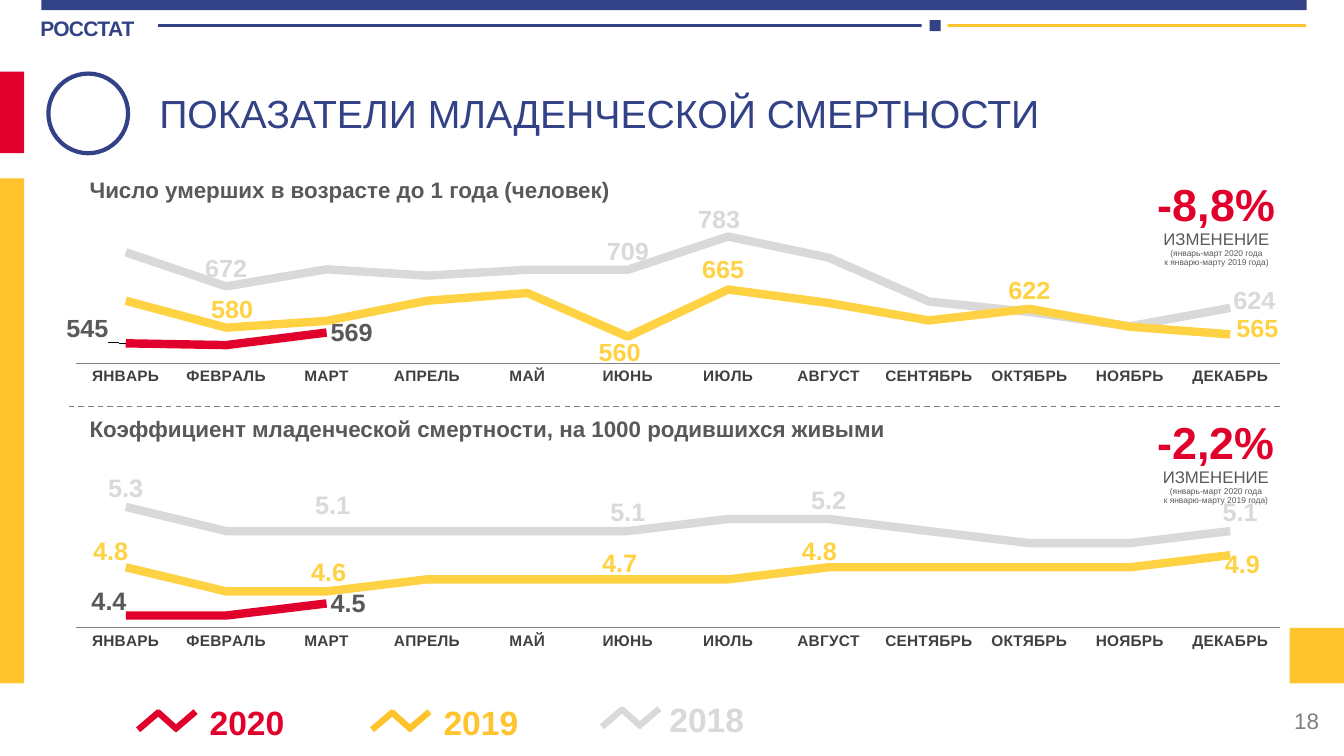
from copy import deepcopy

from lxml import etree
from pptx import Presentation
from pptx.chart.data import CategoryChartData
from pptx.dml.color import RGBColor
from pptx.enum.chart import XL_CHART_TYPE, XL_LABEL_POSITION, XL_TICK_MARK
from pptx.enum.dml import MSO_LINE
from pptx.enum.shapes import MSO_CONNECTOR, MSO_SHAPE
from pptx.enum.text import MSO_ANCHOR, PP_ALIGN
from pptx.oxml.ns import qn
from pptx.util import Inches, Pt

BLUE = RGBColor(0x33, 0x42, 0x86)
RED = RGBColor(0xE1, 0x00, 0x2B)
AMBER = RGBColor(0xFF, 0xC3, 0x2E)
YELLOW = RGBColor(0xFF, 0xD2, 0x43)
SILVER = RGBColor(0xD9, 0xD9, 0xD9)
GREY = RGBColor(0x80, 0x80, 0x80)
DARK = RGBColor(0x59, 0x59, 0x59)
INK = RGBColor(0x40, 0x40, 0x40)
WHITE = RGBColor(0xFF, 0xFF, 0xFF)

LEFT, CENTER, RIGHT = PP_ALIGN.LEFT, PP_ALIGN.CENTER, PP_ALIGN.RIGHT
TOP, MIDDLE = MSO_ANCHOR.TOP, MSO_ANCHOR.MIDDLE
ABOVE, BESIDE = XL_LABEL_POSITION.ABOVE, XL_LABEL_POSITION.RIGHT
RECTANGLE, OVAL = MSO_SHAPE.RECTANGLE, MSO_SHAPE.OVAL
STRAIGHT, DASH = MSO_CONNECTOR.STRAIGHT, MSO_LINE.DASH
LINE_CHART, NO_TICK = XL_CHART_TYPE.LINE, XL_TICK_MARK.NONE

CHART_WIDTH, CHART_HEIGHT = 12.58, 2.3
MONTHS = ["ЯНВАРЬ", "ФЕВРАЛЬ", "МАРТ", "АПРЕЛЬ", "МАЙ", "ИЮНЬ", "ИЮЛЬ",
          "АВГУСТ", "СЕНТЯБРЬ", "ОКТЯБРЬ", "НОЯБРЬ", "ДЕКАБРЬ"]
YEAR_STYLES = [("2018", SILVER, SILVER, ABOVE), ("2019", YELLOW, YELLOW, ABOVE),
               ("2020", RED, DARK, BESIDE)]

DEATHS = [[748, 672, 710, 696, 709, 709, 783, 736, 638, 615, 583, 624],
          [640, 580, 595, 640, 657, 560, 665, 635, 596, 622, 582, 565],
          [545, 541, 569] + [None] * 9]
DEATH_LABELS = [{1: (0, 0), 5: (0, 0), 6: (-0.09, 0.01), 11: (0.24, 0.11)},
                {1: (0.06, 0), 5: (-0.08, 0.34), 6: (-0.05, -0.02), 9: (0, 0), 11: (0.27, 0.12)},
                {0: (-0.63, -0.15), 2: (0, 0)}]
RATES = [[5.3, 5.1, 5.1, 5.1, 5.1, 5.1, 5.2, 5.2, 5.1, 5, 5, 5.1],
         [4.8, 4.6, 4.6, 4.7, 4.7, 4.7, 4.7, 4.8, 4.8, 4.8, 4.8, 4.9],
         [4.4, 4.4, 4.5] + [None] * 9]
RATE_LABELS = [{0: (0, 0), 2: (0.06, -0.07), 5: (0, 0), 7: (0, 0), 11: (0.1, 0)},
               {0: (-0.15, 0.02), 2: (0.02, -0.01), 5: (-0.08, 0.02), 7: (-0.09, 0.02),
                11: (0.12, 0.27)},
               {0: (-0.38, -0.14), 2: (0, 0)}]


def style_font(font, size, color, bold=False, name="Arial"):
    font.name, font.size, font.bold = name, Pt(size), bold
    font.color.rgb = color


def write(para, text, size=16, color=DARK, bold=False, align=LEFT, spacing=None):
    para.alignment, para.line_spacing = align, spacing
    span = para.add_run()
    span.text = text
    style_font(span.font, size, color, bold)
    return span


def add_text(page, text, left, top, width, height, anchor=TOP, **style):
    box = page.shapes.add_textbox(Inches(left), Inches(top), Inches(width), Inches(height))
    box.text_frame.word_wrap = True
    box.text_frame.vertical_anchor = anchor
    write(box.text_frame.paragraphs[0], text, **style)
    return box


def add_block(page, left, top, width, height, fill=None, outline=None, kind=RECTANGLE):
    block = page.shapes.add_shape(kind, Inches(left), Inches(top), Inches(width), Inches(height))
    block.shadow.inherit = False
    if fill is None:
        block.fill.background()
    else:
        block.fill.solid()
        block.fill.fore_color.rgb = fill
    if outline is None:
        block.line.fill.background()
    else:
        block.line.color.rgb = outline
        block.line.width = Pt(3)


def add_line(page, start, end, color, width, dash=None):
    line = page.shapes.add_connector(STRAIGHT, *[Inches(value) for value in start + end])
    line.line.color.rgb = color
    line.line.width = Pt(width)
    if dash is not None:
        line.line.dash_style = dash
    etree.SubElement(line._element.spPr, qn("a:effectLst"))


def add_layout(parent, position, **values):
    layout = etree.Element(qn("c:layout"))
    manual = etree.SubElement(layout, qn("c:manualLayout"))
    for key, value in values.items():
        etree.SubElement(manual, qn("c:" + key)).set("val", str(value))
    parent.insert(position, layout)


def label_points(series, offsets, color, position, number_format):
    labels = series.data_labels
    labels.show_value = True
    labels.number_format, labels.number_format_is_linked = number_format, False
    labels.position = position
    style_font(labels.font, 18, color, True)
    group = labels._element
    for leader in group.findall(qn("c:showLeaderLines")):
        group.remove(leader)
    shared = list(group)
    for index in range(len(MONTHS)):
        label = etree.Element(qn("c:dLbl"))
        etree.SubElement(label, qn("c:idx")).set("val", str(index))
        if index in offsets:
            right, down = offsets[index]
            add_layout(label, 1, x=round(right / CHART_WIDTH, 4), y=round(down / CHART_HEIGHT, 4))
            label.extend(deepcopy(shared))
        else:
            etree.SubElement(label, qn("c:delete")).set("val", "1")
        group.insert(index, label)


def add_month_chart(page, top, rows, offsets, limits, plot_top, plot_height, number_format):
    data = CategoryChartData()
    data.categories = MONTHS
    for (year, *_), row in zip(YEAR_STYLES, rows):
        data.add_series(year, row)
    chart = page.shapes.add_chart(LINE_CHART, Inches(0.41), Inches(top), Inches(CHART_WIDTH),
                                  Inches(CHART_HEIGHT), data).chart
    chart.has_legend = chart.has_title = False
    style_font(chart.font, 9, INK, name="Cabin")
    months, scale = chart.category_axis, chart.value_axis
    months.major_tick_mark = months.minor_tick_mark = NO_TICK
    months.format.line.color.rgb = GREY
    months.format.line.width = Pt(0.75)
    style_font(months.tick_labels.font, 11, INK, True)
    scale.minimum_scale, scale.maximum_scale = limits
    scale.has_major_gridlines = False
    scale.visible = False
    area = chart._chartSpace.chart.plotArea
    for layout in area.findall(qn("c:layout")):
        area.remove(layout)
    add_layout(area, 0, layoutTarget="inner", xMode="edge", yMode="edge",
               x=0.027, y=plot_top, w=0.95, h=plot_height)
    plot = chart.plots[0]
    plot.vary_by_categories = False
    for series, shown, (_, color, label_color, position) in zip(plot.series, offsets, YEAR_STYLES):
        series.smooth = False
        series.format.line.color.rgb = color
        series.format.line.width = Pt(6)
        label_points(series, shown, label_color, position, number_format)


def add_change(page, share, left, top, width, height):
    box = add_text(page, share, left, top, width, height, anchor=MIDDLE,
                   size=32, color=RED, bold=True, align=CENTER, spacing=0.9)
    for text, size in [("ИЗМЕНЕНИЕ", 12), ("(январь-март 2020 года", 6),
                       ("к январю-марту 2019 года)", 6)]:
        write(box.text_frame.add_paragraph(), text, size=size, align=CENTER, spacing=0.9)


def add_legend_key(page, year, color, left, top, text_left, text_width):
    for start, end in [(0, 0.21), (0.36, 0.57), (0.39, 0.19)]:
        add_line(page, (left + start, top + 0.18), (left + end, top), color, 4.5)
    add_text(page, year, text_left, top - 0.15, text_width, 0.5,
             size=24, color=color, bold=True, align=CENTER)


def add_frame(page):
    agency = add_text(page, "РОССТАТ", 0.4, 0.15, 1.15, 0.32, size=15, color=BLUE, bold=True)
    frame = agency.text_frame
    frame.margin_left = frame.margin_right = frame.margin_top = frame.margin_bottom = 0
    frame.paragraphs[0].runs[0].font._element.set("spc", "-50")
    add_block(page, 0.41, 0, 12.55, 0.1, BLUE)
    add_block(page, 0, 0.71, 0.24, 0.81, RED)
    add_block(page, 0, 1.77, 0.24, 5.01, AMBER)
    add_block(page, 12.79, 6.23, 0.54, 0.55, AMBER)
    add_line(page, (1.57, 0.25), (9.33, 0.25), BLUE, 2)
    add_line(page, (9.19, 0.25), (12.95, 0.25), AMBER, 2)
    add_block(page, 9.14, 0.2, 0.26, 0.11, WHITE)
    add_block(page, 9.22, 0.2, 0.11, 0.11, BLUE)
    add_block(page, 0.48, 0.73, 0.79, 0.79, outline=BLUE, kind=OVAL)
    add_text(page, "18", 10.18, 6.95, 3, 0.4, anchor=MIDDLE, color=GREY, align=RIGHT)


def add_title(page, text):
    title = page.shapes.title
    title.left, title.top = Inches(1.48), Inches(0.82)
    title.width, title.height = Inches(10.15), Inches(0.6)
    title.text_frame.vertical_anchor = MIDDLE
    title.text_frame.word_wrap = True
    write(title.text_frame.paragraphs[0], text, size=28, color=BLUE)


def main():
    deck = Presentation()
    deck.slide_width, deck.slide_height = Inches(13.33), Inches(7.5)
    page = deck.slides.add_slide(deck.slide_layouts[5])
    add_frame(page)
    add_title(page, "ПОКАЗАТЕЛИ МЛАДЕНЧЕСКОЙ СМЕРТНОСТИ")
    add_line(page, (0.68, 4.03), (12.71, 4.03), GREY, 1, DASH)
    add_month_chart(page, 4.67, RATES, RATE_LABELS, (4.3, 5.5), 0.052, 0.625, "#,##0.0")
    add_month_chart(page, 2.04, DEATHS, DEATH_LABELS, (500, 800), 0.088, 0.589, "#,##0")
    for text, top, width in [
            ("Число умерших в возрасте до 1 года (человек)", 1.74, 6.62),
            ("Коэффициент младенческой смертности, на 1000 родившихся живыми", 4.11, 8.24)]:
        add_text(page, text, 0.79, top, width, 0.32, anchor=MIDDLE, bold=True, spacing=0.9)
    add_change(page, "-8,8%", 11.18, 1.77, 1.77, 0.93)
    add_change(page, "-2,2%", 11.31, 4.12, 1.5, 0.94)
    add_legend_key(page, "2020", RED, 1.37, 7.06, 1.87, 1.16)
    add_legend_key(page, "2019", AMBER, 3.69, 7.06, 4.19, 1.16)
    add_legend_key(page, "2018", SILVER, 5.97, 7.03, 6.38, 1.26)
    deck.save("out.pptx")


if __name__ == "__main__":
    main()
